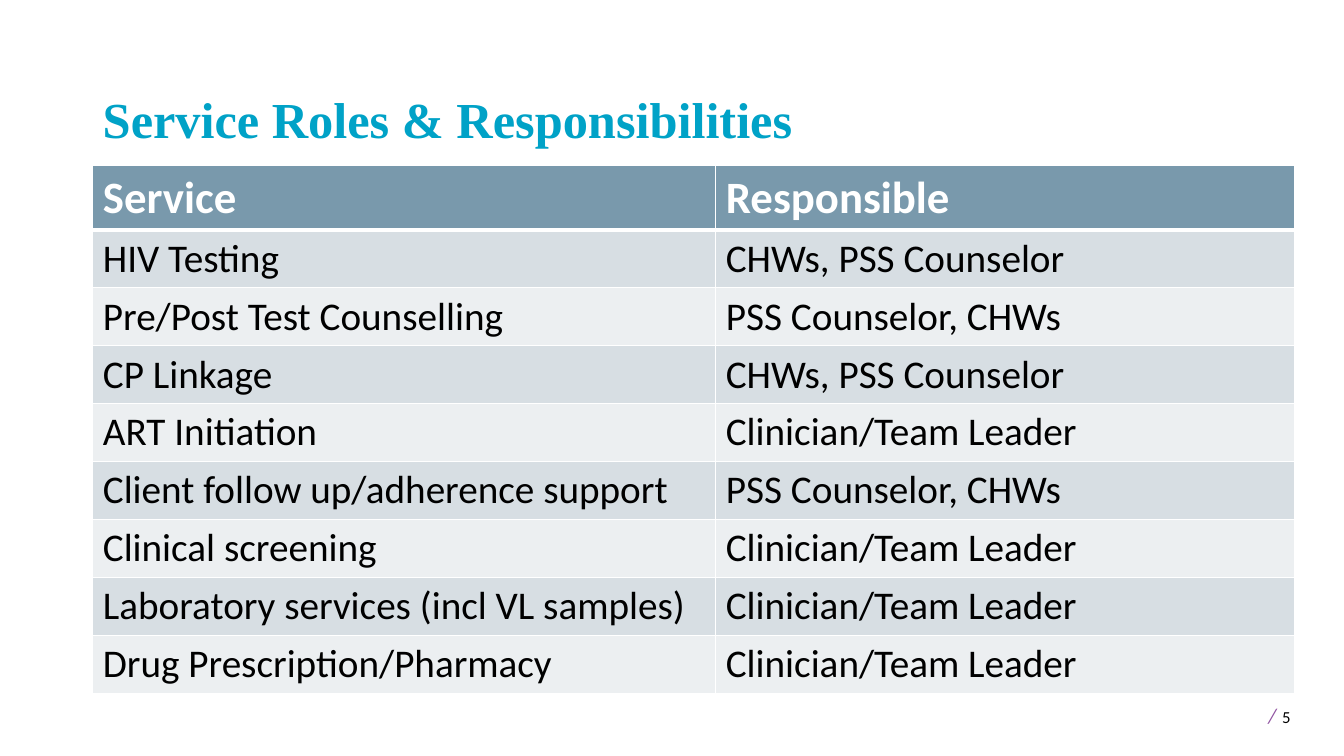
from dataclasses import dataclass

import pptx
import pptx.dml.color
import pptx.enum.text
import pptx.oxml
import pptx.oxml.ns
import pptx.util
from pptx.util import Cm

COLORS = {
    "title": "00A2C7",
    "header": "7999AC",
    "band_dark": "D7DEE3",
    "band_light": "ECEFF1",
    "slash": "9053A1",
    "white": "FFFFFF",
    "black": "000000",
}
HEADER_HEIGHT, ROW_HEIGHT = 1.62, 1.46
COLUMN_WIDTHS = (15.7, 14.58)


@dataclass
class Role:
    service: str
    responsible: str


HEADING = Role("Service", "Responsible")
ROLES = [
    Role("HIV Testing", "CHWs, PSS Counselor"),
    Role("Pre/Post Test Counselling", "PSS Counselor, CHWs"),
    Role("CP Linkage", "CHWs, PSS Counselor"),
    Role("ART Initiation", "Clinician/Team Leader"),
    Role("Client follow up/adherence support", "PSS Counselor, CHWs"),
    Role("Clinical screening", "Clinician/Team Leader"),
    Role("Laboratory services (incl VL samples)", "Clinician/Team Leader"),
    Role("Drug Prescription/Pharmacy", "Clinician/Team Leader"),
]


def rgb(color: str) -> pptx.dml.color.RGBColor:
    return pptx.dml.color.RGBColor.from_string(COLORS[color])


def add_text(paragraph, text: str, *, size: float, color: str = "black",
             font: str = "Calibri", bold: bool = False, italic: bool = False) -> None:
    run = paragraph.add_run()
    run.text = text
    run.font.name = font
    run.font.size = pptx.util.Pt(size)
    run.font.bold = bold
    run.font.italic = italic
    run.font.color.rgb = rgb(color)


def add_box(slide, left: float, top: float, width: float, height: float):
    frame = slide.shapes.add_textbox(Cm(left), Cm(top), Cm(width), Cm(height)).text_frame
    frame.word_wrap = True
    return frame


def set_borders(cell, top: float, bottom: float) -> None:
    properties = cell._tc.get_or_add_tcPr()
    for side, points in {"L": 1, "R": 1, "T": top, "B": bottom}.items():
        properties.append(pptx.oxml.parse_xml(
            f'<a:ln{side} {pptx.oxml.ns.nsdecls("a")} w="{pptx.util.Pt(points)}">'
            f'<a:solidFill><a:srgbClr val="{COLORS["white"]}"/></a:solidFill></a:ln{side}>'))


def fill_row(table, index: int, role: Role) -> None:
    is_header = index == 0
    band = "header" if is_header else ("band_light", "band_dark")[index % 2]
    table.rows[index].height = Cm(HEADER_HEIGHT if is_header else ROW_HEIGHT)
    for column, text in enumerate((role.service, role.responsible)):
        cell = table.cell(index, column)
        set_borders(cell, top=3 if index == 1 else 1, bottom=3 if is_header else 1)
        cell.fill.solid()
        cell.fill.fore_color.rgb = rgb(band)
        add_text(cell.text_frame.paragraphs[0], text, size=32 if is_header else 28,
                 color="white" if is_header else "black", bold=is_header)


def main() -> None:
    deck = pptx.Presentation()
    deck.slide_width, deck.slide_height = Cm(33.87), Cm(19.05)
    slide = deck.slides.add_slide(deck.slide_layouts[6])

    # Page number
    page_number = add_box(slide, 31.57, 17.48, 2.21, 1.02).paragraphs[0]
    add_text(page_number, " ", size=18)
    add_text(page_number, "/", size=15, color="slash", italic=True)
    add_text(page_number, " ", size=18)
    add_text(page_number, "5", size=12)

    # Roles table
    rows = [HEADING, *ROLES]
    roles_table = slide.shapes.add_table(
        len(rows), len(COLUMN_WIDTHS), Cm(2.34), Cm(4.17), Cm(sum(COLUMN_WIDTHS)),
        Cm(HEADER_HEIGHT + ROW_HEIGHT * len(ROLES))).table
    for column, width in zip(roles_table.columns, COLUMN_WIDTHS):
        column.width = Cm(width)
    for index, role in enumerate(rows):
        fill_row(roles_table, index, role)

    # Title
    title = add_box(slide, 2.34, 1.02, 29.21, 2.87)
    title.vertical_anchor = pptx.enum.text.MSO_ANCHOR.BOTTOM
    title.paragraphs[0].line_spacing = 0.9
    add_text(title.paragraphs[0], "Service Roles & Responsibilities", size=36,
             color="title", font="Times New Roman", bold=True)

    deck.save("out.pptx")


if __name__ == "__main__":
    main()
